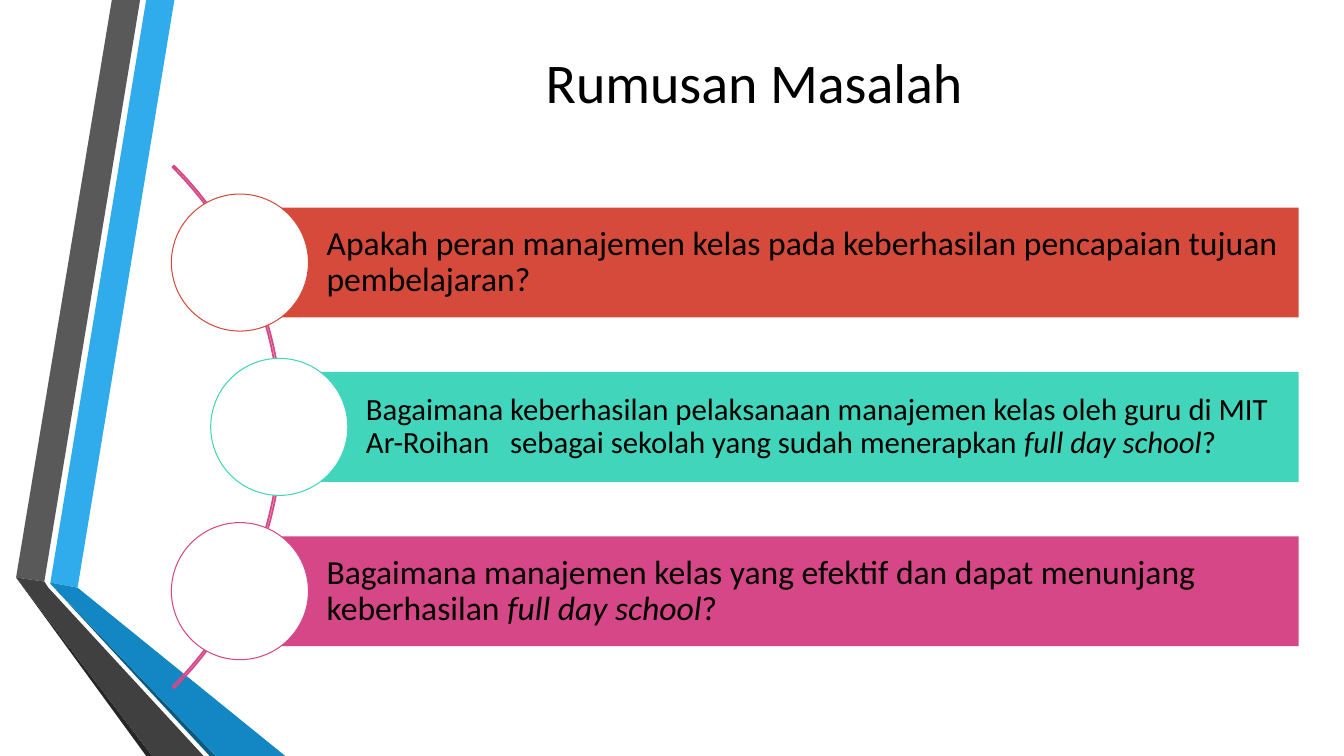
import dataclasses

import pptx
import pptx.dml.color
import pptx.enum.shapes
import pptx.enum.text
import pptx.util
from pptx.util import Inches

FONT = "Calibri"
BLACK, WHITE, PINK = "000000", "FFFFFF", "D64787"
BAR_RIGHT, BAR_HEIGHT = 12.88, 1.09
FIRST_BAR_TOP, BAR_STEP = 2.06, 1.63
CIRCLE_SIZE = 1.36


@dataclasses.dataclass
class Ribbon:
    color: str
    points: list[tuple[float, float]]


@dataclasses.dataclass
class Question:
    left: float
    color: str
    size: int
    margin: float
    spans: list[tuple[str, bool]]  # text, italic


RIBBONS = [
    Ribbon("30ACEC", [(0.5, 5.78), (0.77, 5.83), (1.73, 0), (1.45, 0)]),
    Ribbon("595959", [(1.39, 0), (1.11, 0), (0.16, 5.73), (0.44, 5.77)]),
    Ribbon("262626", [(0.16, 5.73), (1.45, 7.5), (1.51, 7.5)]),
    Ribbon("0C5A82", [(0.5, 5.79), (2.08, 7.5), (2.14, 7.5)]),
    Ribbon("1287C3", [(0.5, 5.79), (2.14, 7.5), (2.83, 7.5), (0.77, 5.83), (0.5, 5.78)]),
    Ribbon("404040", [(2.02, 7.5), (0.48, 5.83), (0.44, 5.77), (0.16, 5.73), (1.51, 7.5)]),
]

QUESTIONS = [
    Question(2.38, "D64A3B", 24, 0.07, [
        ("Apakah peran manajemen kelas pada keberhasilan pencapaian tujuan pembelajaran?", False),
    ]),
    Question(2.77, "41D6BC", 22, 0.06, [
        ("Bagaimana keberhasilan pelaksanaan manajemen kelas oleh guru di MIT "
         "Ar-Roihan   sebagai sekolah yang sudah menerapkan ", False),
        ("full day school", True),
        ("?", False),
    ]),
    Question(2.38, PINK, 24, 0.07, [
        ("Bagaimana manajemen kelas yang efektif dan dapat menunjang keberhasilan ", False),
        ("full day school", True),
        ("?", False),
    ]),
]


def rgb(color: str) -> pptx.dml.color.RGBColor:
    return pptx.dml.color.RGBColor.from_string(color)


def paint(shape, fill: str | None = None, line: str | None = None, width: float = 0.75) -> None:
    shape.shadow.inherit = False
    if fill:
        shape.fill.solid()
        shape.fill.fore_color.rgb = rgb(fill)
    else:
        shape.fill.background()
    if line:
        shape.line.color.rgb = rgb(line)
        shape.line.width = pptx.util.Pt(width)
    else:
        shape.line.fill.background()


def format_paragraph(para, size: int, align) -> None:
    para.alignment = align
    para.font.name = FONT
    para.font.size = pptx.util.Pt(size)
    para.font.color.rgb = rgb(BLACK)


def add_preset(page, kind, left: float, top: float, width: float, height: float):
    return page.shapes.add_shape(kind, Inches(left), Inches(top), Inches(width), Inches(height))


def draw_ribbon(page, ribbon: Ribbon) -> None:
    start, *rest = [(Inches(x), Inches(y)) for x, y in ribbon.points]
    builder = page.shapes.build_freeform(*start)
    builder.add_line_segments(rest, close=True)
    paint(builder.convert_to_shape(), ribbon.color)


def draw_title(page, text: str) -> None:
    title = page.shapes.title
    title.left, title.top = Inches(2), Inches(0.28)
    title.width, title.height = Inches(10.96), Inches(1.05)
    title.text_frame.text = text
    title.text_frame.vertical_anchor = pptx.enum.text.MSO_ANCHOR.MIDDLE
    format_paragraph(title.text_frame.paragraphs[0], 40, pptx.enum.text.PP_ALIGN.CENTER)


def draw_arc(page) -> None:
    arc = add_preset(page, pptx.enum.shapes.MSO_SHAPE.BLOCK_ARC, -4.53, 0.57, 7.33, 7.33)
    for index, value in enumerate((189, 27, 0.003)):
        arc.adjustments[index] = value
    paint(arc, line=PINK, width=1.25)


def draw_question(page, question: Question, top: float) -> None:
    bar = add_preset(page, pptx.enum.shapes.MSO_SHAPE.RECTANGLE,
                     question.left, top, BAR_RIGHT - question.left, BAR_HEIGHT)
    paint(bar, question.color)
    frame = bar.text_frame
    frame.word_wrap = True
    frame.vertical_anchor = pptx.enum.text.MSO_ANCHOR.MIDDLE
    frame.margin_left = Inches(0.86)
    frame.margin_top = frame.margin_right = frame.margin_bottom = Inches(question.margin)
    para = frame.paragraphs[0]
    format_paragraph(para, question.size, pptx.enum.text.PP_ALIGN.LEFT)
    para.line_spacing = 0.9
    for text, italic in question.spans:
        span = para.add_run()
        span.text = text
        span.font.italic = italic

    # The circle is centred on the left edge of the bar
    circle = add_preset(page, pptx.enum.shapes.MSO_SHAPE.OVAL,
                        question.left - CIRCLE_SIZE / 2,
                        top + (BAR_HEIGHT - CIRCLE_SIZE) / 2, CIRCLE_SIZE, CIRCLE_SIZE)
    paint(circle, WHITE, question.color)


def main() -> None:
    deck = pptx.Presentation()
    deck.slide_width, deck.slide_height = Inches(13.33), Inches(7.5)
    page = deck.slides.add_slide(deck.slide_layouts.get_by_name("Title Only"))

    # Folded ribbons on the left
    for ribbon in RIBBONS:
        draw_ribbon(page, ribbon)

    # Title
    draw_title(page, "Rumusan Masalah")

    # Questions along the arc
    draw_arc(page)
    for index, question in enumerate(QUESTIONS):
        draw_question(page, question, FIRST_BAR_TOP + index * BAR_STEP)

    deck.save("out.pptx")


if __name__ == "__main__":
    main()
